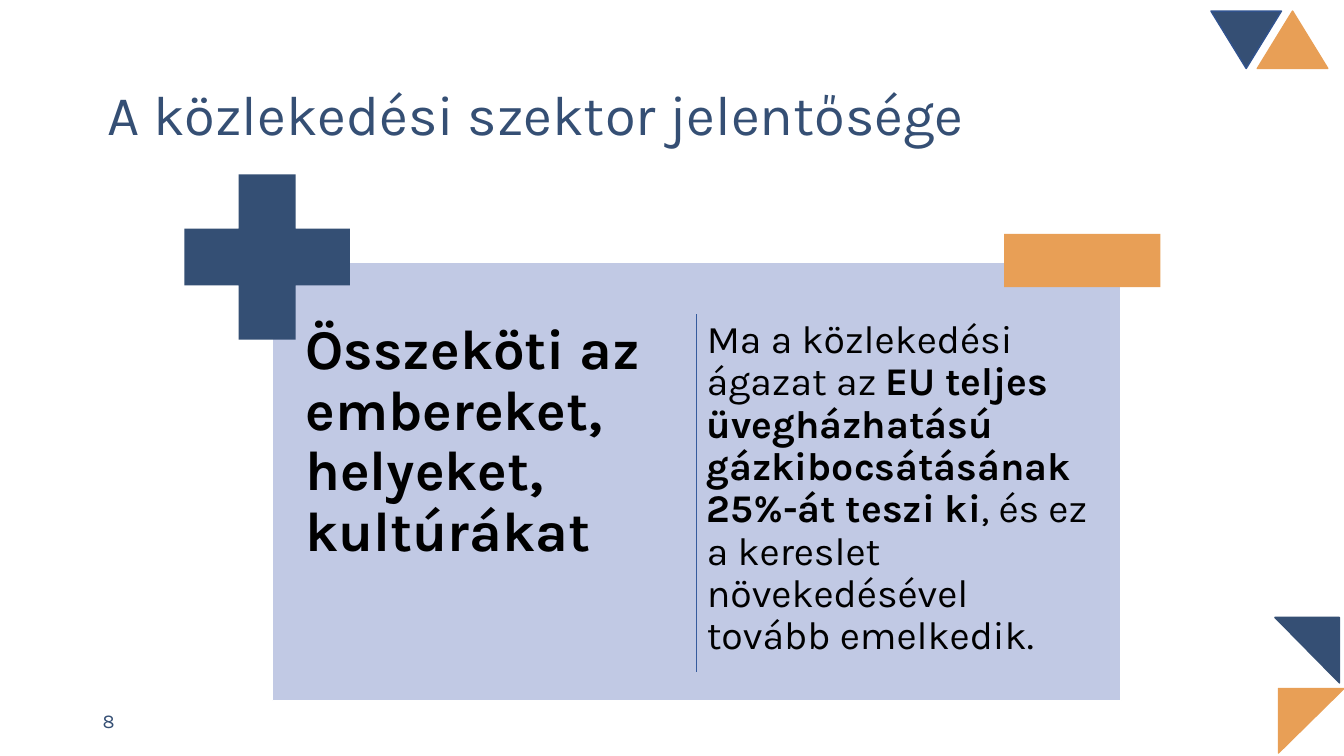
from pptx import Presentation
from pptx.dml.color import RGBColor
from pptx.enum.shapes import MSO_CONNECTOR, MSO_SHAPE
from pptx.enum.text import MSO_ANCHOR, MSO_AUTO_SIZE, PP_ALIGN
from pptx.oxml.ns import qn
from pptx.util import Inches, Pt
from lxml.etree import SubElement

# Content
TITLE = "A közlekedési szektor jelentősége"
GAINS = [("Összeköti az embereket, helyeket, kultúrákat", True)]
COSTS = [
    ("Ma a közlekedési ágazat az ", False),
    ("EU teljes üvegházhatású gázkibocsátásának 25%-át teszi ki", True),
    (", és ez a kereslet növekedésével tovább emelkedik.", False),
]
PAGE = [("8", False)]
COLORS = {"navy": "354F74", "plus": "344F74", "edge": "31538F",
          "orange": "E89F56", "panel": "C1C9E4", "rule": "365B9D",
          "white": "FFFFFF", "black": "000000"}
FONT = "Karla"

# Corner triangles: box, rotation, apex, fill, line
CORNERS = [
    ((12.47, 0.11, 0.7, 0.57), 0, 0.5, "orange", "orange"),
    ((12.68, 6.83, 0.65, 0.64), 180, 1, "orange", "orange"),
    ((12.64, 6.13, 0.65, 0.64), 270, 1, "navy", "navy"),
    ((12.01, 0.11, 0.7, 0.57), 180, 0.5, "navy", "edge"),
]
# Text columns: left edge, inset, size, runs
TOP, WIDE, HIGH = 3.11, 3.91, 3.72
COLUMNS = [(2.95, 0.08, 40, GAINS), (6.95, 0.06, 28, COSTS)]


def color(name):
    return RGBColor.from_string(COLORS[name])


def style(obj, **values):
    for key, value in values.items():
        setattr(obj, key, value)


def add_block(slide, kind, box, fill, line=None):
    block = slide.shapes.add_shape(kind, *map(Inches, box))
    block.shadow.inherit = False
    block.fill.solid()
    block.fill.fore_color.rgb = color(fill)
    if line:
        block.line.color.rgb = color(line)
        block.line.width = Pt(1)
    else:
        block.line.fill.background()
    return block


def write(shape, runs, size, tint, inset=None, anchor=MSO_ANCHOR.TOP, space=None):
    frame = shape.text_frame
    style(frame, word_wrap=True, auto_size=MSO_AUTO_SIZE.NONE,
          vertical_anchor=anchor)
    if inset is not None:
        for side in ("left", "top", "right", "bottom"):
            setattr(frame, f"margin_{side}", Inches(inset))
    para = frame.paragraphs[0]
    style(para, alignment=PP_ALIGN.LEFT, line_spacing=space)
    for text, bold in runs:
        run = para.add_run()
        run.text = text
        style(run.font, name=FONT, size=Pt(size), bold=bold)
        run.font.color.rgb = color(tint)


def main():
    deck = Presentation()
    style(deck, slide_width=Inches(13.33), slide_height=Inches(7.5))
    slide = deck.slides.add_slide(deck.slide_layouts[5])

    # Page number and corner triangles
    page = slide.shapes.add_textbox(*map(Inches, (0.92, 6.95, 3, 0.4)))
    write(page, PAGE, 14, "navy", anchor=MSO_ANCHOR.MIDDLE)
    for box, turn, apex, fill, line in CORNERS:
        corner = add_block(slide, MSO_SHAPE.ISOSCELES_TRIANGLE, box, fill, line)
        corner.rotation = turn
        corner.adjustments[0] = apex

    # Title
    title = slide.shapes.title
    style(title, left=Inches(0.97), top=Inches(0.44),
          width=Inches(11.5), height=Inches(1.45))
    write(title, [(TITLE, False)], 40, "navy",
          anchor=MSO_ANCHOR.MIDDLE, space=0.9)

    # Panel with its two columns
    add_block(slide, MSO_SHAPE.RECTANGLE, (2.7, 2.6, 8.42, 4.35), "panel", "white")
    for left, inset, size, runs in COLUMNS:
        column = slide.shapes.add_textbox(*map(Inches, (left, TOP, WIDE, HIGH)))
        write(column, runs, size, "black", inset, space=0.9)

    # Plus and minus signs
    plus = add_block(slide, MSO_SHAPE.CROSS, (1.83, 1.73, 1.64, 1.64), "plus")
    plus.adjustments[0] = 0.328
    add_block(slide, MSO_SHAPE.RECTANGLE, (9.96, 2.32, 1.55, 0.53), "orange")

    # Divider between the columns
    rule = slide.shapes.add_connector(
        MSO_CONNECTOR.STRAIGHT, *map(Inches, (6.91, 3.12, 6.91, 6.67)))
    rule.line.color.rgb = color("rule")
    rule.line.width = Pt(1)
    SubElement(rule._element.spPr, qn("a:effectLst"))

    deck.save("out.pptx")


if __name__ == "__main__":
    main()
